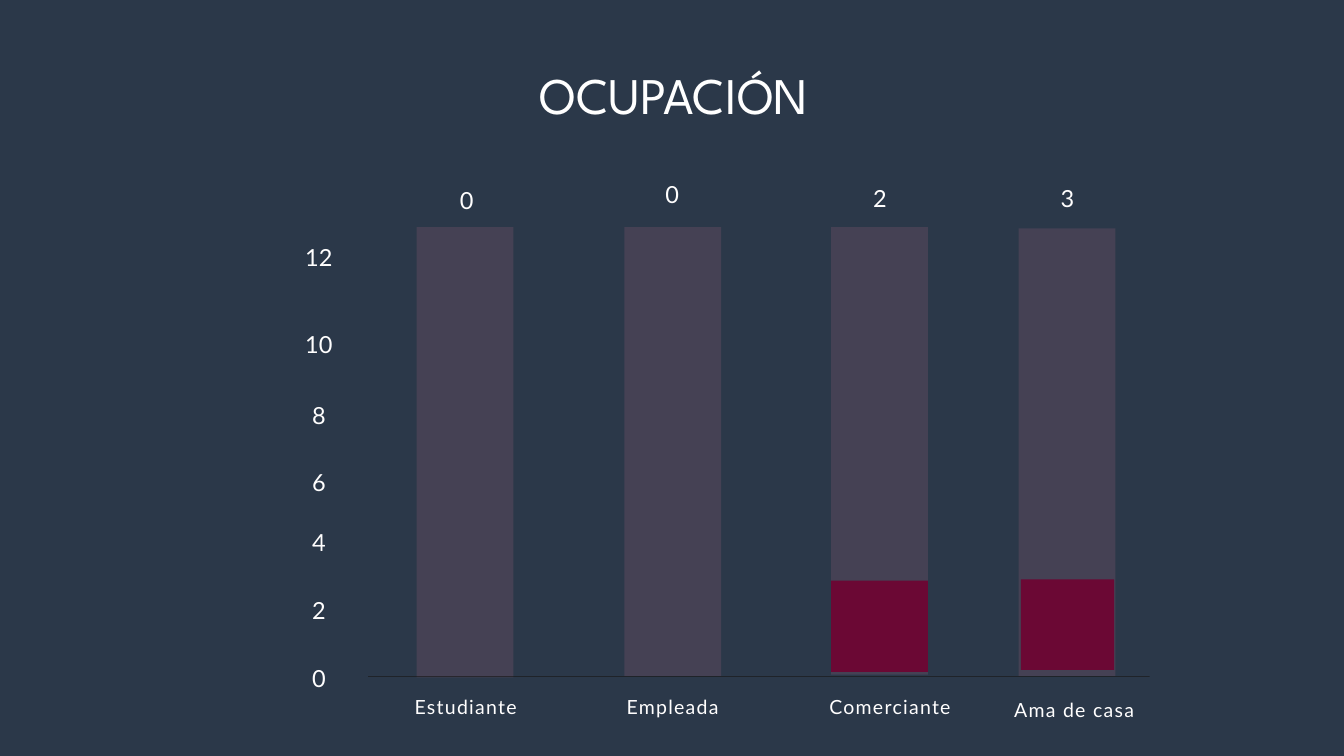
import pptx
import pptx.dml.color
import pptx.enum.shapes
import pptx.enum.text
import pptx.oxml.ns
import pptx.util
import lxml.etree

Inches = pptx.util.Inches
Pt = pptx.util.Pt
RGBColor = pptx.dml.color.RGBColor

NAVY = RGBColor(0x2B, 0x38, 0x49)
WHITE = RGBColor(0xFF, 0xFF, 0xFF)
CREAM = RGBColor(0xFF, 0xFE, 0xFE)
MAUVE = RGBColor(0x9C, 0x61, 0x7B)
WINE = RGBColor(0x6B, 0x08, 0x34)
BLACK = RGBColor(0x19, 0x19, 0x19)

TITLE = ("League Spartan", 55, 77, 0, WHITE)
LABEL = ("Lato", 20.9, 34.9, 1.4, CREAM)
NUMBER = ("Lato", 25.2, 38.5, 0.2, CREAM)

TICKS = [("12", 3.5), ("10", 4.79), ("8", 5.85), ("6", 6.85),
         ("4", 7.74), ("2", 8.75), ("0", 9.76)]

BAR_WIDTH = 1.44
BARS = [(6.2, 3.38, 6.7), (9.29, 3.38, 6.68),
        (12.37, 3.38, 6.66), (15.16, 3.4, 6.66)]
BLOCKS = [(12.37, 8.64, BAR_WIDTH, 1.36), (15.19, 8.62, 1.39, 1.35)]

COUNTS = [("0", 6.56, 2.65), ("0", 9.62, 2.57),
          ("2", 12.71, 2.62), ("3", 15.5, 2.62)]
NAMES = [("Estudiante", 5.95, 10.2, 1.96), ("Empleada", 9.03, 10.2, 1.96),
         ("Comerciante", 12.11, 10.2, 2.27), ("Ama de casa", 14.85, 10.25, 2.27)]


def add_text(slide, text, left, top, width, height, style):
    font, size, line, gap, color = style
    box = slide.shapes.add_textbox(
        Inches(left), Inches(top), Inches(width), Inches(height))
    frame = box.text_frame
    frame.margin_left = frame.margin_right = 0
    frame.margin_top = frame.margin_bottom = 0
    frame.word_wrap = True
    frame.auto_size = pptx.enum.text.MSO_AUTO_SIZE.SHAPE_TO_FIT_TEXT
    frame.text = text
    para = frame.paragraphs[0]
    para.alignment = pptx.enum.text.PP_ALIGN.CENTER
    para.line_spacing = Pt(line)
    run = para.runs[0]
    run.font.name = font
    run.font.size = Pt(size)
    run.font.color.rgb = color
    if gap:
        run.font._element.set("spc", str(round(gap * 100)))


def add_number(slide, text, left, top):
    add_text(slide, text, left, top, 0.77, 0.5, NUMBER)


def add_rect(slide, left, top, width, height, color, alpha=None):
    rect = slide.shapes.add_shape(
        pptx.enum.shapes.MSO_SHAPE.RECTANGLE,
        Inches(left), Inches(top), Inches(width), Inches(height))
    rect.shadow.inherit = False
    rect.fill.solid()
    rect.fill.fore_color.rgb = color
    rect.line.fill.background()
    if alpha is not None:
        qn = pptx.oxml.ns.qn
        tint = rect._element.spPr.find(qn("a:solidFill")).find(qn("a:srgbClr"))
        lxml.etree.SubElement(tint, qn("a:alpha")).set("val", str(alpha * 1000))


def main():
    deck = pptx.Presentation()
    deck.slide_width = Inches(20)
    deck.slide_height = Inches(11.25)
    slide = deck.slides.add_slide(deck.slide_layouts[6])
    slide.background.fill.solid()
    slide.background.fill.fore_color.rgb = NAVY

    add_text(slide, "OCUPACIÓN", 2.52, 0.78, 15.02, 1.01, TITLE)
    for text, top in TICKS:
        add_number(slide, text, 4.36, top)
    for left, top, height in BARS:
        add_rect(slide, left, top, BAR_WIDTH, height, MAUVE, 23)
    for block in BLOCKS:
        add_rect(slide, *block, WINE)
    add_rect(slide, 5.48, 10.06, 11.63, 0.01, BLACK)
    for text, left, top in COUNTS:
        add_number(slide, text, left, top)
    for text, left, top, width in NAMES:
        add_text(slide, text, left, top, width, 0.45, LABEL)

    deck.save("out.pptx")


if __name__ == "__main__":
    main()
